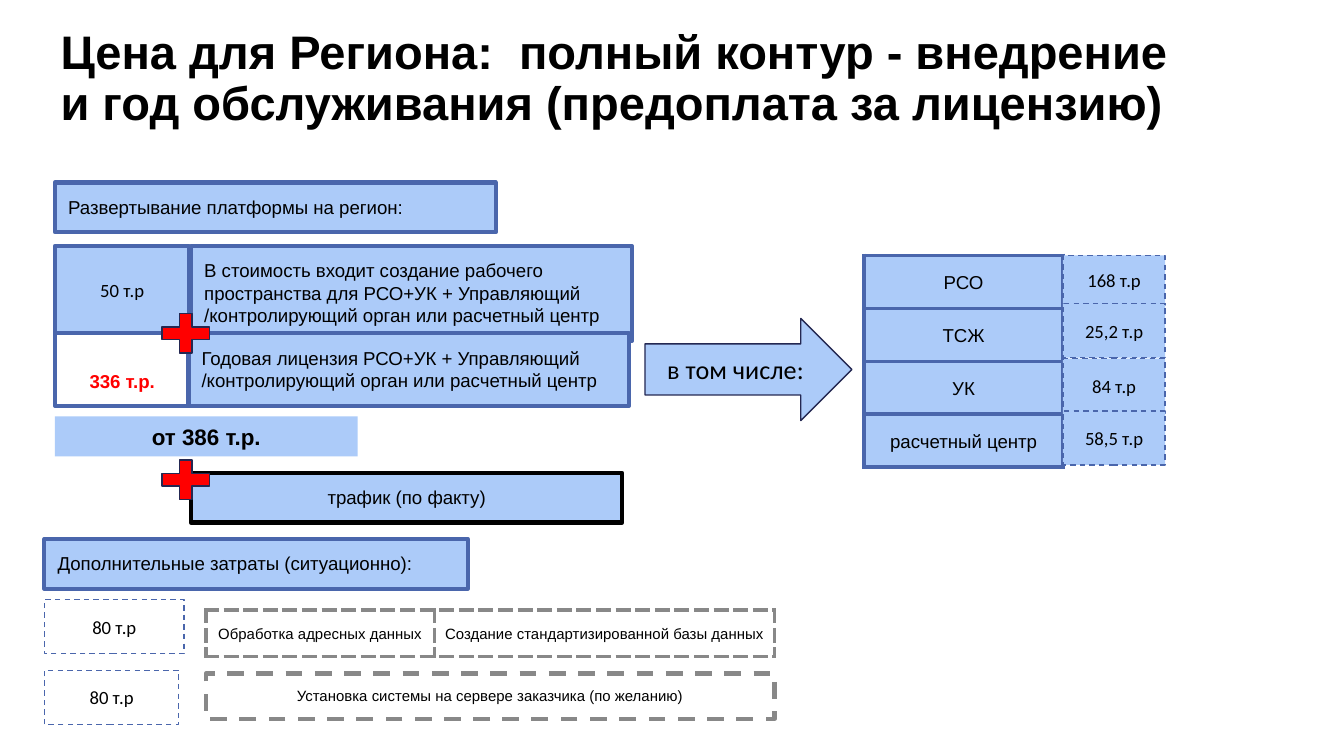
import pptx
import pptx.dml.color
import pptx.enum.dml
import pptx.enum.shapes
import pptx.enum.text
import pptx.oxml
import pptx.oxml.ns
import pptx.util
from pptx.util import Cm

BLUE, EDGE, NAVY = "ACCBF9", "4A66AC", "242852"
BLACK, GRAY, RED, WHITE = "000000", "888888", "FF0000", "FFFFFF"
SHAPES = pptx.enum.shapes.MSO_SHAPE
ALIGN = pptx.enum.text.PP_ALIGN
ANCHOR = pptx.enum.text.MSO_ANCHOR
DASH = pptx.enum.dml.MSO_LINE.DASH


def color(value):
    return pptx.dml.color.RGBColor.from_string(value)


class PriceSlide:
    """Holds the slide and the style shared by its elements; lengths are in cm."""

    font = "Arial"
    price_font = "Calibri"
    size = 10
    inset = 0.25

    def __init__(self, presentation):
        self.slide = presentation.slides.add_slide(presentation.slide_layouts[5])

    def set_text(self, frame, text, size=None, font=None, ink=BLACK, bold=False,
                 align=ALIGN.CENTER, spacing=1.0):
        frame.text = text
        paragraph = frame.paragraphs[0]
        paragraph.alignment = align
        paragraph.line_spacing = spacing
        for run in paragraph.runs:
            run.font.name = font or self.font
            run.font.size = pptx.util.Pt(size or self.size)
            run.font.bold = bold
            run.font.color.rgb = color(ink)

    def title(self, text, left, top, width, height):
        shape = self.slide.shapes.title
        shape.left, shape.top = Cm(left), Cm(top)
        shape.width, shape.height = Cm(width), Cm(height)
        frame = shape.text_frame
        frame.auto_size = pptx.enum.text.MSO_AUTO_SIZE.NONE
        frame.vertical_anchor = ANCHOR.MIDDLE
        self.set_text(frame, text, 25.2, bold=True, align=ALIGN.LEFT, spacing=0.9)

    def box(self, text, left, top, width, height, fill=BLUE, edge=EDGE, weight=2.25,
            dash=None, kind=SHAPES.RECTANGLE, anchor=ANCHOR.TOP, **style):
        shape = self.slide.shapes.add_shape(
            kind, Cm(left), Cm(top), Cm(width), Cm(height))
        shape.shadow.inherit = False
        if fill:
            shape.fill.solid()
            shape.fill.fore_color.rgb = color(fill)
        else:
            shape.fill.background()
        if edge:
            shape.line.color.rgb = color(edge)
            shape.line.width = pptx.util.Pt(weight)
            if dash:
                shape.line.dash_style = dash
        else:
            shape.line.fill.background()
        frame = shape.text_frame
        frame.word_wrap = True
        frame.vertical_anchor = anchor
        frame.margin_left = frame.margin_right = Cm(self.inset)
        frame.margin_top = frame.margin_bottom = Cm(self.inset)
        if text:
            self.set_text(frame, text, **style)
        return shape

    def price(self, text, left, top, width, height, **style):
        self.box(text, left, top, width, height, anchor=ANCHOR.MIDDLE,
                 font=self.price_font, **style)

    def plus(self, left, top):
        shape = self.box("", left, top, 1.22, 1.02, fill=RED, edge=NAVY, weight=0.75,
                         kind=SHAPES.MATH_PLUS)
        shape.adjustments[0] = 0.235

    def table(self, rows, left, top, widths, row_height, fill, edge, dash, size):
        table = self.slide.shapes.add_table(
            len(rows), len(widths), Cm(left), Cm(top),
            Cm(sum(widths)), Cm(row_height * len(rows))).table
        table.first_row = table.horz_banding = False
        for column, width in zip(table.columns, widths):
            column.width = Cm(width)
        for row, texts in zip(table.rows, rows):
            row.height = Cm(row_height)
            for cell, text in zip(row.cells, texts):
                cell.margin_left = cell.margin_right = Cm(0.08)
                cell.margin_top = cell.margin_bottom = Cm(self.inset)
                cell.vertical_anchor = ANCHOR.MIDDLE
                cell.fill.solid()
                cell.fill.fore_color.rgb = color(fill)
                self.set_text(cell.text_frame, text, size, spacing=1.15)
                self.borders(cell, edge, dash)

    def borders(self, cell, edge, dash):
        properties = cell._tc.get_or_add_tcPr()
        for index, side in enumerate(("lnL", "lnR", "lnT", "lnB")):
            properties.insert(index, pptx.oxml.parse_xml(
                f'<a:{side} {pptx.oxml.ns.nsdecls("a")} w="{pptx.util.Pt(2.25)}">'
                f'<a:solidFill><a:srgbClr val="{edge}"/></a:solidFill>'
                f'<a:prstDash val="{dash}"/></a:{side}>'))


def main():
    presentation = pptx.Presentation()
    presentation.slide_width, presentation.slide_height = Cm(25.4), Cm(14.29)
    page = PriceSlide(presentation)
    page.title("Цена для Региона:  полный контур - внедрение и год обслуживания "
               "(предоплата за лицензию)", 0.89, 0.13, 21.89, 2.77)

    # Deployment and yearly licence
    page.box("от 386 т.р.", 1.04, 7.87, 5.72, 0.76, edge=None, anchor=ANCHOR.MIDDLE,
             size=12, bold=True)
    page.box("Развертывание платформы на регион:", 1.04, 3.45, 8.33, 0.94,
             align=ALIGN.LEFT)
    page.box("В стоимость входит создание рабочего пространства для РСО+УК + "
             "Управляющий /контролирующий орган или расчетный центр",
             3.61, 4.65, 8.33, 1.8, align=ALIGN.LEFT)
    page.price("50 т.р", 1.04, 4.65, 2.54, 1.65)
    page.box("трафик (по факту)", 3.61, 8.94, 8.15, 0.94, edge=BLACK)
    page.box("Годовая лицензия РСО+УК + Управляющий /контролирующий орган "
             "или расчетный центр", 3.56, 6.3, 8.33, 1.37, align=ALIGN.LEFT)
    page.box("336 т.р.", 1.04, 6.3, 2.54, 1.37, fill=None, anchor=ANCHOR.BOTTOM,
             ink=RED, bold=True)
    for top in (5.79, 8.56):
        page.plus(2.9, top)

    # Breakdown by organisation
    page.price("в том числе:", 12.19, 6.02, 3.91, 1.93, edge=NAVY, weight=0.75,
               kind=SHAPES.RIGHT_ARROW, size=14)
    page.table([["РСО"], ["ТСЖ"], ["УК"], ["расчетный центр"]],
               16.33, 4.83, [3.76], 1, BLUE, EDGE, "solid", 10)
    for text, top, height in (("168 т.р", 4.83, 0.94), ("25,2 т.р", 5.74, 1.02),
                              ("84 т.р", 6.78, 1.04), ("58,5 т.р", 7.77, 1.02)):
        page.price(text, 20.09, top, 1.93, height, weight=0.75, dash=DASH)

    # Additional costs
    page.box("Дополнительные затраты (ситуационно):", 0.84, 10.19, 8, 0.94,
             align=ALIGN.LEFT)
    for top, width in ((11.33, 2.64), (12.67, 2.54)):
        page.price("80 т.р", 0.84, top, width, 1.03, fill=None, weight=0.75, dash=DASH)
    page.table([["Обработка адресных данных", "Создание стандартизированной базы данных"]],
               3.89, 11.53, [4.32, 6.43], 0.88, WHITE, GRAY, "dash", 8)
    page.box("Установка системы на сервере заказчика (по желанию)",
             3.89, 12.73, 10.75, 0.86, fill=None, edge=GRAY, dash=DASH, size=8)

    presentation.save("out.pptx")


if __name__ == "__main__":
    main()
